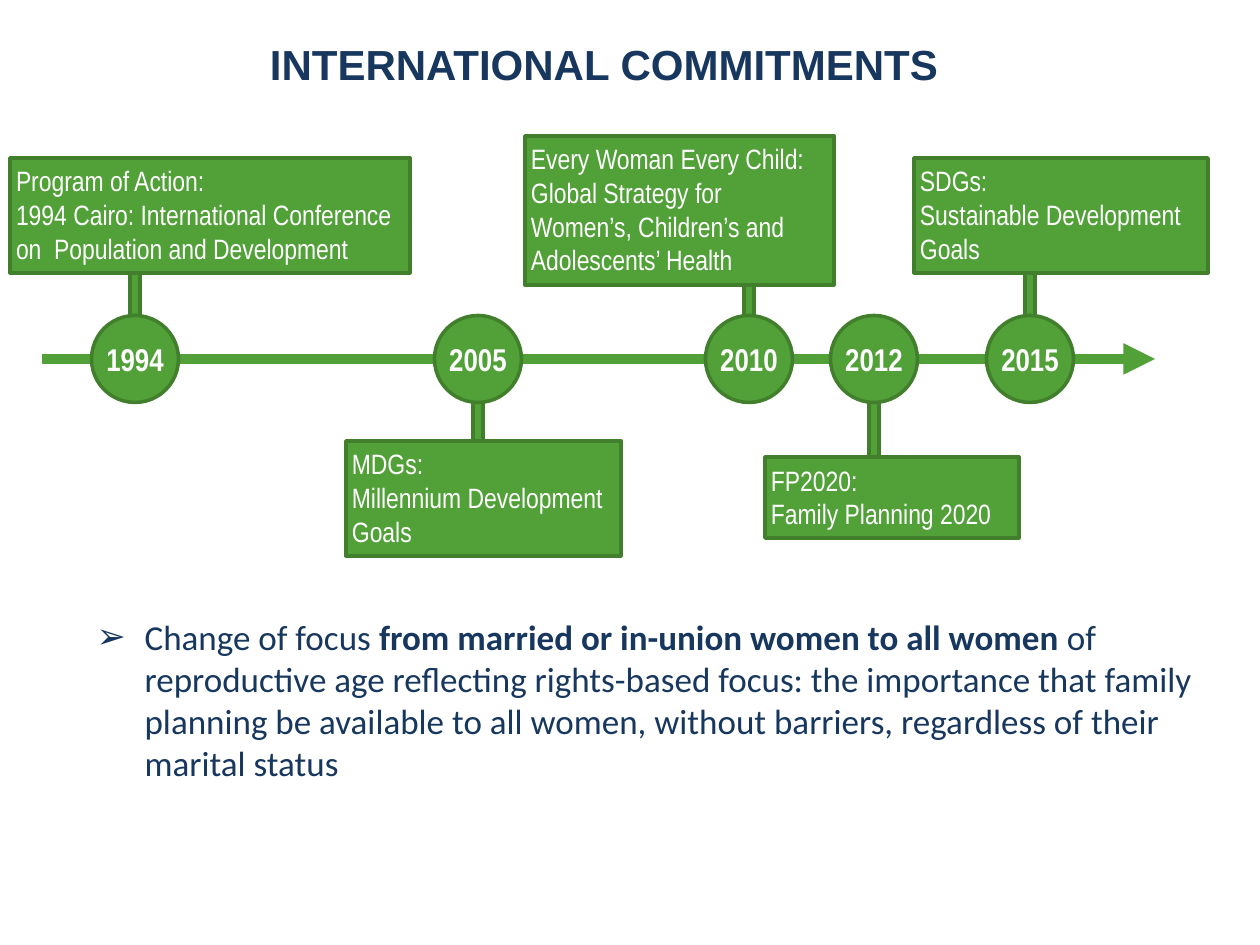
"""Builds a timeline slide of international family planning commitments."""
from lxml import etree
from pptx import Presentation
from pptx.dml.color import RGBColor
from pptx.enum.shapes import MSO_CONNECTOR, MSO_SHAPE
from pptx.enum.text import MSO_ANCHOR, MSO_AUTO_SIZE, PP_ALIGN
from pptx.oxml.ns import qn
from pptx.util import Pt

RECT, OVAL = MSO_SHAPE.RECTANGLE, MSO_SHAPE.OVAL
STRAIGHT = MSO_CONNECTOR.STRAIGHT
TOP, MIDDLE = MSO_ANCHOR.TOP, MSO_ANCHOR.MIDDLE
LEFT, CENTER = PP_ALIGN.LEFT, PP_ALIGN.CENTER
NO_FIT = MSO_AUTO_SIZE.NONE
PX = 914400 / 126
GREEN, DARK_GREEN, NAVY, WHITE = "51A038", "417F2D", "17375E", "FFFFFF"
AXIS_Y, DIAMETER = 359, 87
STEM_WIDTH, STEM_HEIGHT = 10, 94


def style(paragraph, font_name, size, color, bold, align):
    paragraph.alignment = align
    font = paragraph.font
    font.name, font.size, font.bold = font_name, Pt(size), bold
    font.color.rgb = RGBColor.from_string(color)


def add_block(kind, *box):
    block = slide.shapes.add_shape(kind, *[round(v * PX) for v in box])
    block.shadow.inherit = False
    block.fill.solid()
    block.fill.fore_color.rgb = RGBColor.from_string(GREEN)
    block.line.color.rgb = RGBColor.from_string(DARK_GREEN)
    block.line.width = Pt(2)
    return block


prs = Presentation()
prs.slide_width, prs.slide_height = round(1260 * PX), round(945 * PX)
slide = prs.slides.add_slide(prs.slide_layouts[1])

title, focus = slide.placeholders
for holder, box in ((title, (42, 32, 1124, 63)), (focus, (84, 609, 1124, 183))):
    holder.left, holder.top, holder.width, holder.height = [round(v * PX) for v in box]
    holder.text_frame.auto_size = NO_FIT

title.text_frame.text = "INTERNATIONAL COMMITMENTS"
style(title.text_frame.paragraphs[0], "Arial", 24, NAVY, True, CENTER)

change = focus.text_frame.paragraphs[0]
for words, bold in (
    ("Change of focus ", False),
    ("from married or in-union women to all women ", True),
    ("of reproductive age reflecting rights-based focus: the importance that family "
     "planning be available to all women, without barriers, regardless of their "
     "marital status", False),
):
    run = change.add_run()
    run.text, run.font.bold = words, bold
change.space_before, change.space_after = Pt(0), Pt(6)
properties = change._p.get_or_add_pPr()
properties.set("marL", str(round(48 * PX)))
properties.set("indent", str(round(-48 * PX)))
etree.SubElement(properties, qn("a:buChar"), char="➢")
style(change, "Calibri", 20, NAVY, None, LEFT)

milestones = [
    ("1994", 135, 241, (10, 158, 400, 115), "Program of Action:",
     "1994 Cairo: International Conference on  Population and Development"),
    ("2005", 478, 378, (346, 441, 275, 115), "MDGs:",
     "Millennium Development Goals"),
    ("2010", 749, 258, (525, 136, 309, 149), "Every Woman Every Child:",
     "Global Strategy for Women’s, Children’s and Adolescents’ Health"),
    ("2012", 874, 382, (765, 457, 254, 81), "FP2020:",
     "Family Planning 2020"),
    ("2015", 1030, 263, (914, 158, 294, 115), "SDGs:",
     "Sustainable Development Goals"),
]

for year, center, stem_top, *card in milestones:
    add_block(RECT, center - STEM_WIDTH / 2, stem_top, STEM_WIDTH, STEM_HEIGHT)

axis = slide.shapes.add_connector(
    STRAIGHT, *[round(v * PX) for v in (42, AXIS_Y, 1155, AXIS_Y)])
axis.line.color.rgb = RGBColor.from_string(GREEN)
axis.line.width = Pt(6)
etree.SubElement(axis.line._get_or_add_ln(), qn("a:tailEnd"), type="triangle")
etree.SubElement(axis._element.spPr, qn("a:effectLst"))

for year, center, stem_top, card_box, heading, detail in milestones:
    marker = add_block(OVAL, center - DIAMETER / 2, AXIS_Y - DIAMETER / 2,
                       DIAMETER, DIAMETER)
    card = add_block(RECT, *card_box)
    for block, words, side, anchor, size, bold, align in (
        (marker, year, 0, MIDDLE, 18, True, CENTER),
        (card, f"{heading}\n{detail}", 6, TOP, 16, False, LEFT),
    ):
        frame = block.text_frame
        frame.text, frame.word_wrap, frame.vertical_anchor = words, True, anchor
        frame.margin_left = frame.margin_right = round(side * PX)
        frame.margin_top = frame.margin_bottom = round(6 * PX)
        for paragraph in frame.paragraphs:
            style(paragraph, "Arial Narrow", size, WHITE, bold, align)

prs.save("out.pptx")
